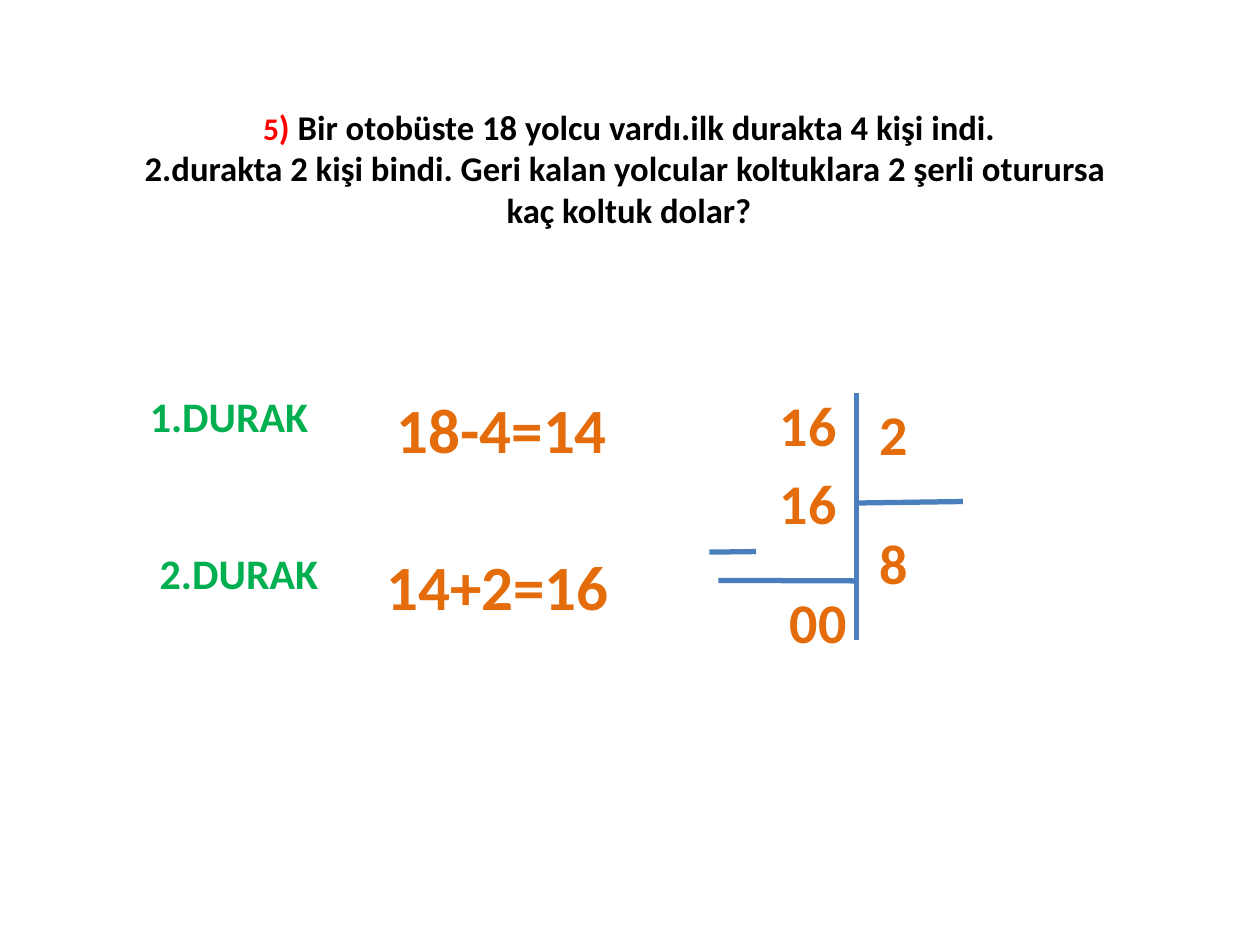
"""Build the bus passenger word problem slide with its worked division."""
from lxml import etree
from pptx import Presentation
from pptx import util as u
from pptx.dml.color import RGBColor
from pptx.enum import shapes, text
from pptx.oxml.ns import qn

COLORS = {"black": "000000", "red": "FF0000", "green": "00B050",
          "orange": "E46C0A", "blue": "4B7EBC"}


def style(font, size, color):
    font.name = "Calibri"
    font.size = u.Pt(size)
    font.bold = True
    font.color.rgb = RGBColor.from_string(COLORS[color])


prs = Presentation()
prs.slide_width, prs.slide_height = u.Cm(25.4), u.Cm(19.05)
s = prs.slides.add_slide(prs.slide_layouts[5])

sp = s.shapes.title
sp.left, sp.top, sp.width, sp.height = u.Cm(0.58), u.Cm(0.76), u.Cm(24.2), u.Cm(8.97)
tf = sp.text_frame
tf.auto_size = text.MSO_AUTO_SIZE.NONE
tf.vertical_anchor = text.MSO_ANCHOR.TOP
tf.margin_top = u.Cm(1.37)
p = tf.paragraphs[0]
p.alignment = text.PP_ALIGN.CENTER
style(p.font, 19.8, "black")
question = [
    ("5", 18, "red"),
    (")", 19.8, "red"),
    (" Bir otobüste 18 yolcu vardı.ilk durakta 4 kişi indi.", 19.8, "black"),
    ("2.durakta 2 kişi bindi. Geri kalan yolcular koltuklara 2 şerli oturursa ", 19.8, "black"),
    ("kaç koltuk dolar?", 19.8, "black"),
]
for i, (words, size, color) in enumerate(question):
    if i > 2:
        p.add_line_break()
    r = p.add_run()
    r.text = words
    style(r.font, size, color)

labels = [
    ("1.DURAK", 2.77, 7.75, 5.36, 1.27, 24, "green"),
    ("18-4=14", 7.75, 7.75, 5.77, 1.8, 36, "orange"),
    ("2.DURAK", 2.97, 10.92, 4.95, 1.27, 24, "green"),
    ("14+2=16", 7.54, 10.92, 5.94, 1.8, 36, "orange"),
    ("16", 15.47, 7.75, 1.98, 1.63, 32, "orange"),
    ("16", 15.47, 9.32, 1.98, 1.63, 32, "orange"),
    ("8", 17.48, 10.52, 1.98, 1.63, 32, "orange"),
    ("2", 17.48, 7.92, 1.98, 1.63, 32, "orange"),
    ("00", 15.67, 11.71, 1.98, 1.63, 32, "orange"),
]
for words, x, y, w, h, size, color in labels:
    tf = s.shapes.add_textbox(u.Cm(x), u.Cm(y), u.Cm(w), u.Cm(h)).text_frame
    tf.word_wrap = True
    tf.auto_size = text.MSO_AUTO_SIZE.SHAPE_TO_FIT_TEXT
    p = tf.paragraphs[0]
    p.text = words
    style(p.font, size, color)

division_lines = [
    (17.27, 7.92, 17.27, 12.9),
    (17.27, 10.14, 19.41, 10.11),
    (14.48, 11.7, 17.25, 11.71),
    (14.3, 11.13, 15.24, 11.12),
]
for ends in division_lines:
    line = s.shapes.add_connector(shapes.MSO_CONNECTOR.STRAIGHT, *map(u.Cm, ends))
    line.line.color.rgb = RGBColor.from_string(COLORS["blue"])
    line.line.width = u.Pt(3)
    etree.SubElement(line._element.spPr, qn("a:effectLst"))

prs.save("out.pptx")
